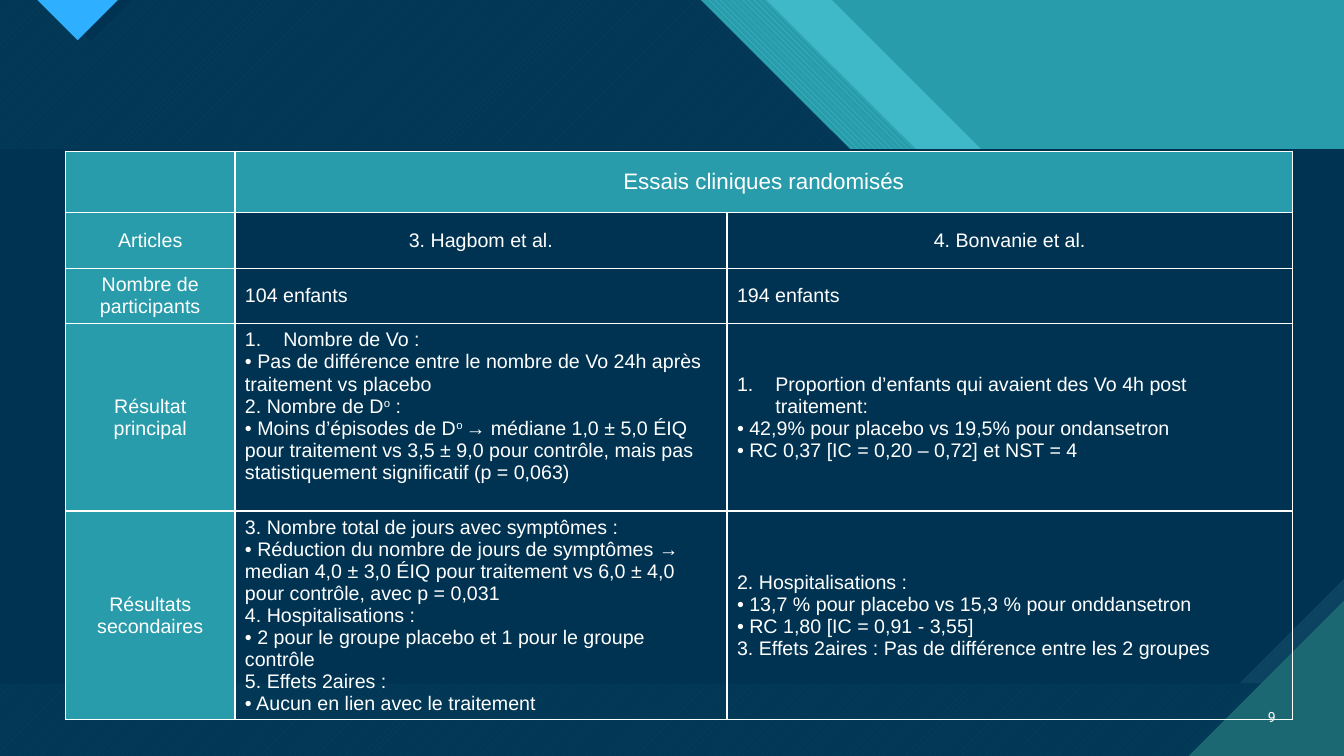
from dataclasses import dataclass

from lxml.etree import SubElement
from pptx import Presentation
from pptx.dml.color import RGBColor
from pptx.enum.dml import MSO_PATTERN_TYPE as Pattern
from pptx.enum.text import MSO_ANCHOR as Anchor, PP_ALIGN as Align
from pptx.oxml.ns import qn
from pptx.util import Inches, Pt


@dataclass(frozen=True)
class Theme:
    navy: str = "003352"
    slate: str = "0C4360"
    teal: str = "299CAB"
    aqua: str = "47C3D3"
    pine: str = "1B6872"
    blue: str = "2FAFFF"
    white: str = "FFFFFF"
    font: str = "Arial"
    number_font: str = "Roboto"
    heading: int = 16
    body: int = 14
    number: int = 10
    border: int = 1


theme = Theme()
rgb = RGBColor.from_string

prs = Presentation()
prs.slide_width, prs.slide_height = Inches(13.33), Inches(7.5)
slide = prs.slides.add_slide(prs.slide_layouts[6])
slide.background.fill.solid()
slide.background.fill.fore_color.rgb = rgb(theme.teal)


def add_polygon(points, color, alpha=None, pattern=None, back=None):
    """Draw a closed outline given in inches."""
    corners = [(Inches(x), Inches(y)) for x, y in points]
    builder = slide.shapes.build_freeform(*corners[0])
    builder.add_line_segments(corners[1:])
    shape = builder.convert_to_shape()
    shape.shadow.inherit = False
    shape.line.fill.background()
    if pattern:
        shape.fill.patterned()
        shape.fill.pattern = pattern
        shape.fill.back_color.rgb = rgb(back)
    else:
        shape.fill.solid()
    shape.fill.fore_color.rgb = rgb(color)
    if alpha:
        tint = shape.fill._xPr.find(qn("a:solidFill"))[0]
        SubElement(tint, qn("a:alpha")).set("val", str(alpha * 1000))


def add_run(paragraph, text, size, font=theme.font, raised=False):
    run = paragraph.add_run()
    run.text = text
    run.font.size, run.font.name = Pt(size), font
    run.font.color.rgb = rgb(theme.white)
    if raised:
        run.font._element.set("baseline", "30000")


# Diagonal bands, each one reaching less far to the right
bands = [
    (8.25, 11.22, 12.34, 3.96, dict(color=theme.aqua, alpha=74)),
    (7.6, 10.58, 11.84, 4.47, dict(color=theme.aqua, back=theme.teal,
                                   pattern=Pattern.WIDE_DOWNWARD_DIAGONAL)),
    (6.95, 9.92, 11.18, 5.12, dict(color=theme.aqua, back=theme.pine,
                                   pattern=Pattern.WIDE_UPWARD_DIAGONAL)),
    (6.95, 9.92, 11.18, 5.12, dict(color=theme.navy, alpha=90)),
]
for top, bend, shelf, side, paint in bands:
    add_polygon([(0, 0), (top, 0), (bend, 2.97), (shelf, 2.97),
                 (13.33, side), (13.33, 7.5), (0, 7.5)], **paint)

# Top marker and its shade
add_polygon([(0.48, 0), (1.31, 0), (0.9, 0.41)], theme.navy)
add_polygon([(0.37, 0), (1.17, 0), (0.77, 0.4)], theme.blue)

# Central panel with its cut corner, then the corner triangle
add_polygon([(0, 1.48), (13.33, 1.48), (13.33, 6.78), (0, 6.78)], theme.slate)
add_polygon([(0, 1.48), (13.33, 1.48), (13.33, 5.74), (12.29, 6.78), (0, 6.78)],
            theme.navy)
add_polygon([(11.79, 7.5), (13.33, 7.5), (13.33, 5.96)], theme.pine)

# Table content: a cell is a list of paragraphs, "#" starts a numbered one,
# "^" encloses raised text and a line feed is a line break
rows = [
    (0.61, [[], ["Essais cliniques randomisés"], []]),
    (0.55, [["Articles"], ["3. Hagbom et al."], ["4. Bonvanie et al."]]),
    (0.55, [["Nombre de participants"], ["104 enfants"], ["194 enfants"]]),
    (1.86, [
        ["Résultat principal"],
        ["#Nombre de Vo :",
         "• Pas de différence entre le nombre de Vo 24h après traitement vs placebo",
         "2. Nombre de D^o^ :\n• Moins d’épisodes de D^o ^→ médiane 1,0 ± 5,0 ÉIQ "
         "pour traitement vs 3,5 ± 9,0 pour contrôle, mais pas statistiquement "
         "significatif (p = 0,063)"],
        ["#Proportion d’enfants qui avaient des Vo 4h post traitement:",
         "• 42,9% pour placebo vs 19,5% pour ondansetron",
         "• RC 0,37 [IC = 0,20 – 0,72] et NST = 4"]]),
    (2.07, [
        ["Résultats secondaires"],
        ["3. Nombre total de jours avec symptômes :",
         "• Réduction du nombre de jours de symptômes → median 4,0 ± 3,0 ÉIQ "
         "pour traitement vs 6,0 ± 4,0 pour contrôle, avec p = 0,031",
         "4. Hospitalisations :",
         "• 2 pour le groupe placebo et 1 pour le groupe contrôle",
         "5. Effets 2aires :",
         "• Aucun en lien avec le traitement"],
        ["2. Hospitalisations :",
         "• 13,7 % pour placebo vs 15,3 % pour onddansetron",
         "• RC 1,80 [IC = 0,91 - 3,55]",
         "3. Effets 2aires : Pas de différence entre les 2 groupes"]]),
]
widths = [1.68, 4.88, 5.61]

# Table of results
results = slide.shapes.add_table(
    len(rows), len(widths), Inches(0.65), Inches(1.5),
    Inches(sum(widths)), Inches(sum(height for height, _ in rows))).table
results.horz_banding = False
for column, width in zip(results.columns, widths):
    column.width = Inches(width)
results.cell(0, 1).merge(results.cell(0, 2))

for r, (height, contents) in enumerate(rows):
    results.rows[r].height = Inches(height)
    for c, paragraphs in enumerate(contents):
        cell = results.cell(r, c)
        cell.vertical_anchor = Anchor.MIDDLE

        # Borders come before the fill in the cell properties
        properties = cell._tc.get_or_add_tcPr()
        for edge in ("a:lnL", "a:lnR", "a:lnT", "a:lnB"):
            border = SubElement(properties, qn(edge), w=str(Pt(theme.border)))
            paint = SubElement(border, qn("a:solidFill"))
            SubElement(paint, qn("a:srgbClr"), val=theme.white)
        if r == 0 or c == 0:
            cell.fill.solid()
            cell.fill.fore_color.rgb = rgb(theme.teal)
        else:
            cell.fill.background()

        for i, text in enumerate(paragraphs):
            frame = cell.text_frame
            line = frame.add_paragraph() if i else frame.paragraphs[0]
            line.alignment = Align.CENTER if c == 0 or r < 2 else Align.LEFT
            if text.startswith("#"):
                layout = line._p.get_or_add_pPr()
                layout.set("marL", str(Inches(0.38)))
                layout.set("indent", str(-Inches(0.38)))
                SubElement(layout, qn("a:buFont"), typeface="+mj-lt")
                SubElement(layout, qn("a:buAutoNum"), type="arabicPeriod")
            size = theme.body if r else theme.heading
            for k, part in enumerate(text.lstrip("#").split("^")):
                for n, piece in enumerate(part.split("\n")):
                    if n:
                        line.add_line_break()
                    add_run(line, piece, size, raised=k % 2 == 1)

# The main result of the first trial sits above the middle of its cell
results.cell(3, 1).margin_bottom = Inches(0.27)

# Slide number
number = slide.shapes.add_textbox(Inches(12.31), Inches(6.91),
                                  Inches(0.44), Inches(0.4)).text_frame
number.word_wrap = True
number.vertical_anchor = Anchor.MIDDLE
number.paragraphs[0].alignment = Align.RIGHT
add_run(number.paragraphs[0], "9", theme.number, theme.number_font)

prs.save("out.pptx")
